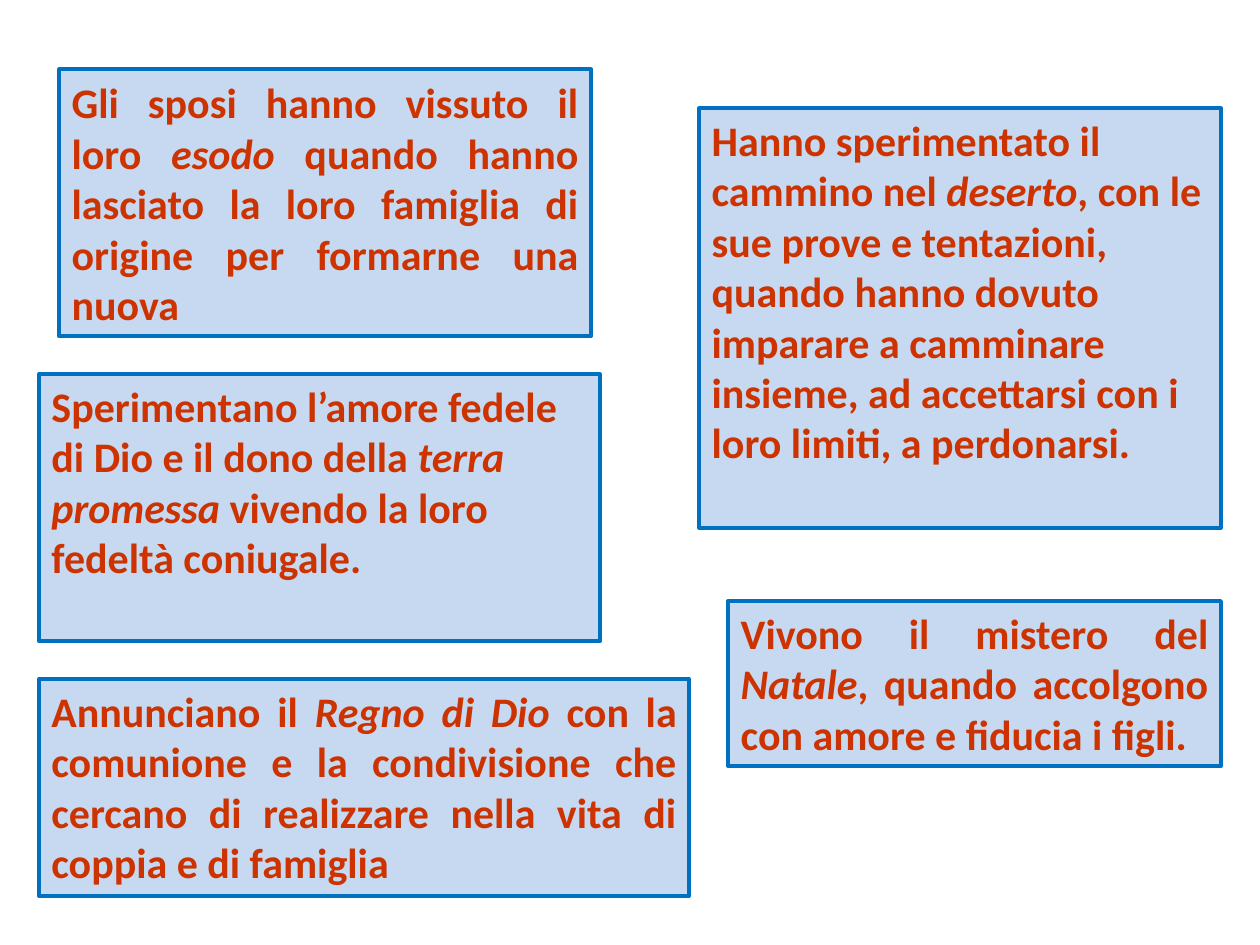
from dataclasses import dataclass

from pptx import Presentation
from pptx.dml.color import RGBColor
from pptx.enum.shapes import MSO_SHAPE
from pptx.enum.text import MSO_ANCHOR, MSO_AUTO_SIZE, PP_ALIGN
from pptx.util import Inches, Pt

RECT = MSO_SHAPE.RECTANGLE
TOP, MIDDLE = MSO_ANCHOR.TOP, MSO_ANCHOR.MIDDLE
LEFT, JUSTIFY = PP_ALIGN.LEFT, PP_ALIGN.JUSTIFY
FIXED = MSO_AUTO_SIZE.NONE


@dataclass(frozen=True)
class Theme:
    fill: RGBColor = RGBColor.from_string("C6D9F1")
    line: RGBColor = RGBColor.from_string("0070C0")
    text: RGBColor = RGBColor.from_string("CC3300")
    font: str = "Calibri"
    size: int = 24
    border: float = 2.25


theme = Theme()

# Box, anchor, alignment, then the text before, in and after the italics
notes = [
    ((0.47, 0.55, 4.22, 2.12), MIDDLE, JUSTIFY,
     ("Gli sposi hanno vissuto il loro ", "esodo",
      " quando hanno lasciato la loro famiglia di origine per formarne una nuova")),
    ((5.55, 0.86, 4.14, 3.33), TOP, LEFT,
     ("Hanno sperimentato il cammino nel ", "deserto",
      ", con le sue prove e tentazioni, quando hanno dovuto imparare a camminare "
      "insieme, ad accettarsi con i loro limiti, a perdonarsi.")),
    ((0.31, 2.97, 4.45, 2.12), TOP, LEFT,
     ("Sperimentano l’amore fedele di Dio e il dono della ", "terra promessa",
      " vivendo la loro fedeltà coniugale.")),
    ((5.78, 4.77, 3.91, 1.31), TOP, JUSTIFY,
     ("Vivono il mistero del ", "Natale",
      ", quando accolgono con amore e fiducia i figli.")),
    ((0.31, 5.39, 5.16, 1.72), TOP, JUSTIFY,
     ("Annunciano il ", "Regno di Dio ",
      "con la comunione e la condivisione che cercano di realizzare nella vita "
      "di coppia e di famiglia")),
]

deck = Presentation()
deck.slide_width, deck.slide_height = Inches(10), Inches(7.5)
slide = deck.slides.add_slide(deck.slide_layouts[6])

for place, anchor, align, parts in notes:
    box = slide.shapes.add_shape(RECT, *map(Inches, place))
    box.shadow.inherit = False
    box.fill.solid()
    box.fill.fore_color.rgb = theme.fill
    box.line.color.rgb = theme.line
    box.line.width = Pt(theme.border)

    frame = box.text_frame
    style = {"word_wrap": True, "auto_size": FIXED, "vertical_anchor": anchor}
    for key, value in style.items():
        setattr(frame, key, value)

    para = frame.paragraphs[0]
    para.alignment = align
    for part, slant in zip(parts, (False, True, False)):
        run = para.add_run()
        run.text = part
        run.font.color.rgb = theme.text
        style = {"name": theme.font, "size": Pt(theme.size),
                 "bold": True, "italic": slant}
        for key, value in style.items():
            setattr(run.font, key, value)

deck.save("out.pptx")
